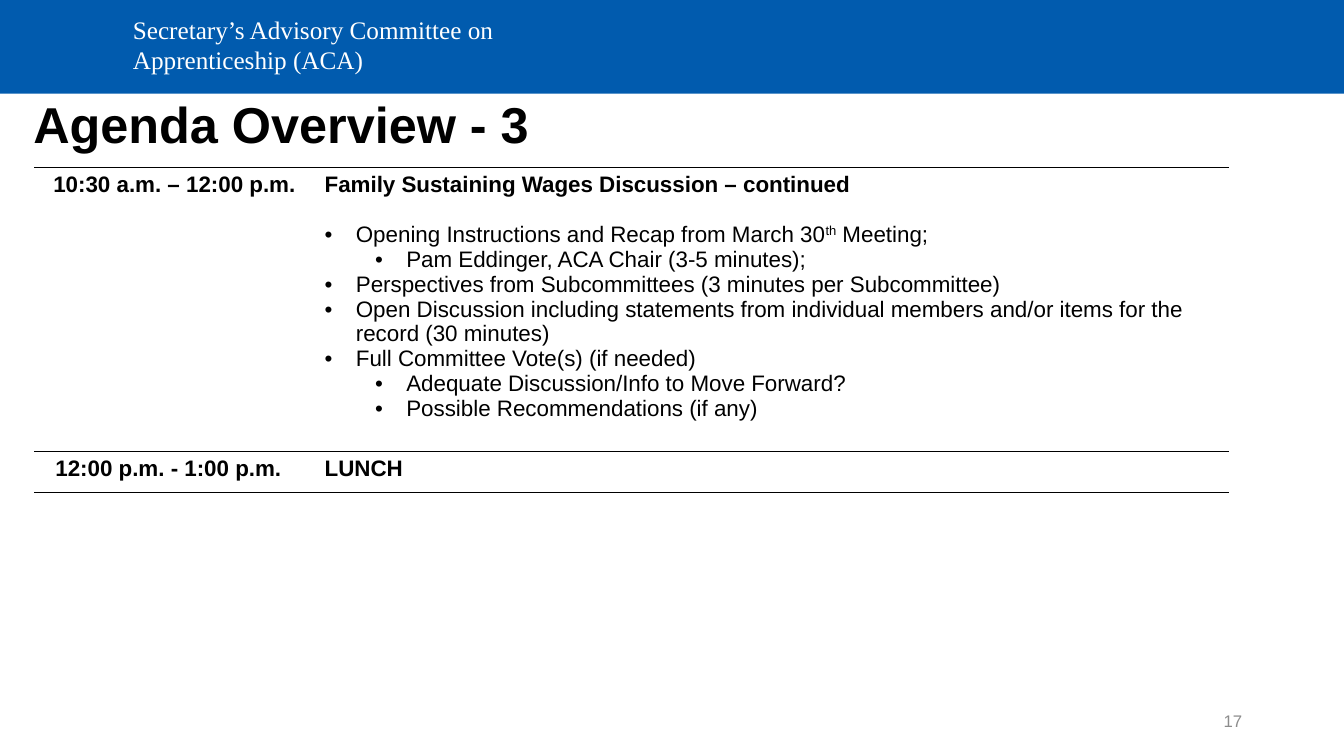
from lxml.etree import SubElement
from pptx import Presentation
from pptx.dml.color import RGBColor
from pptx.enum.shapes import MSO_SHAPE
from pptx.enum.text import MSO_ANCHOR, MSO_AUTO_SIZE, PP_ALIGN
from pptx.oxml.ns import qn
from pptx.util import Inches, Pt

COLORS = {"band": "015BAE", "white": "FFFFFF", "black": "000000", "number": "8C8C8C"}

COMMITTEE = "Secretary’s Advisory Committee on Apprenticeship (ACA)"
TITLE = "Agenda Overview - 3"
PAGE_NUMBER = "17"

# Each session: time, heading, row height, list of (level, text, superscript, rest)
AGENDA = [
    ("10:30 a.m. – 12:00 p.m.", "Family Sustaining Wages Discussion – continued", 2.82, [
        (0, "Opening Instructions and Recap from March 30", "th", " Meeting;"),
        (1, "Pam Eddinger, ACA Chair (3-5 minutes);"),
        (0, "Perspectives from Subcommittees (3 minutes per Subcommittee)"),
        (0, "Open Discussion including statements from individual members "
            "and/or items for the record (30 minutes)"),
        (0, "Full Committee Vote(s) (if needed)"),
        (1, "Adequate Discussion/Info to Move Forward?"),
        (1, "Possible Recommendations (if any)"),
    ]),
    ("12:00 p.m. - 1:00 p.m.", "LUNCH", 0.41, []),
]
TIME_RIGHT_MARGINS = [0.1, 0.22]
COLUMN_WIDTHS = [2.78, 9.07]
HANGING = 0.31
LEVEL_STEP = 0.5


def rgb(name):
    return RGBColor.from_string(COLORS[name])


def write(para, text, size=16, font="Arial", color="black", bold=False,
          align=PP_ALIGN.LEFT, superscript=False):
    para.alignment = align
    span = para.add_run()
    span.text = text
    span.font.size = Pt(size)
    span.font.name = font
    span.font.bold = bold
    span.font.color.rgb = rgb(color)
    if superscript:
        span._r.get_or_add_rPr().set("baseline", "30000")


def add_text_box(page, area, text, anchor=MSO_ANCHOR.TOP, **style):
    box = page.shapes.add_textbox(*map(Inches, area))
    box.text_frame.word_wrap = True
    box.text_frame.vertical_anchor = anchor
    write(box.text_frame.paragraphs[0], text, **style)


def add_bullet(para, level):
    para.level = level
    properties = para._p.get_or_add_pPr()
    properties.set("marL", str(Inches(HANGING + level * LEVEL_STEP)))
    properties.set("indent", str(-Inches(HANGING)))
    SubElement(properties, qn("a:buFont"), typeface="Arial")
    SubElement(properties, qn("a:buChar"), char="•")


def format_cell(cell):
    """Rule the cell above and below only, on a white fill."""
    properties = cell._tc.get_or_add_tcPr()
    for side in ("lnL", "lnR"):
        SubElement(SubElement(properties, qn(f"a:{side}")), qn("a:noFill"))
    for side in ("lnT", "lnB"):
        line = SubElement(properties, qn(f"a:{side}"), w=str(Pt(1)))
        fill = SubElement(line, qn("a:solidFill"))
        SubElement(fill, qn("a:srgbClr"), val=COLORS["black"])
    cell.fill.solid()
    cell.fill.fore_color.rgb = rgb("white")


def add_header(page):
    band = page.shapes.add_shape(MSO_SHAPE.RECTANGLE, 0, 0, Inches(13.33), Inches(0.93))
    band.shadow.inherit = False
    band.fill.solid()
    band.fill.fore_color.rgb = rgb("band")
    band.line.fill.background()
    add_text_box(page, (1.22, 0.09, 3.87, 0.71), COMMITTEE,
                 size=18, font="Times New Roman", color="white")


def add_title(page):
    title = page.shapes.title
    title.left, title.top, title.width, title.height = map(Inches, (0.23, 0.87, 11.76, 0.79))
    frame = title.text_frame
    frame.auto_size = MSO_AUTO_SIZE.NONE
    frame.vertical_anchor = MSO_ANCHOR.MIDDLE
    frame.paragraphs[0].line_spacing = 0.9
    write(frame.paragraphs[0], TITLE, size=36, bold=True)


def add_agenda(page):
    height = sum(session[2] for session in AGENDA)
    frame = page.shapes.add_table(len(AGENDA), len(COLUMN_WIDTHS), Inches(0.34), Inches(1.66),
                                  Inches(sum(COLUMN_WIDTHS)), Inches(height))
    table = frame.table
    table.first_row = table.horz_banding = False
    for column, width in zip(table.columns, COLUMN_WIDTHS):
        column.width = Inches(width)
    for row, session, margin in zip(table.rows, AGENDA, TIME_RIGHT_MARGINS):
        time, heading, row_height, items = session
        row.height = Inches(row_height)
        time_cell, topic_cell = row.cells
        for cell in row.cells:
            format_cell(cell)
        time_cell.margin_right = Inches(margin)
        write(time_cell.text_frame.paragraphs[0], time, bold=True, align=PP_ALIGN.CENTER)
        heading_para = topic_cell.text_frame.paragraphs[0]
        write(heading_para, heading, bold=True)
        if items:
            heading_para.space_after = Pt(17.9)
        for level, *parts in items:
            para = topic_cell.text_frame.add_paragraph()
            add_bullet(para, level)
            for index, part in enumerate(parts):
                write(para, part, superscript=index == 1)


def main():
    deck = Presentation()
    deck.slide_width, deck.slide_height = Inches(13.33), Inches(7.5)
    page = deck.slides.add_slide(deck.slide_layouts[5])
    add_header(page)
    add_title(page)
    add_text_box(page, (9.42, 6.95, 3, 0.4), PAGE_NUMBER, anchor=MSO_ANCHOR.MIDDLE,
                 size=12, color="number", align=PP_ALIGN.RIGHT)
    add_agenda(page)
    deck.save("out.pptx")


if __name__ == "__main__":
    main()
